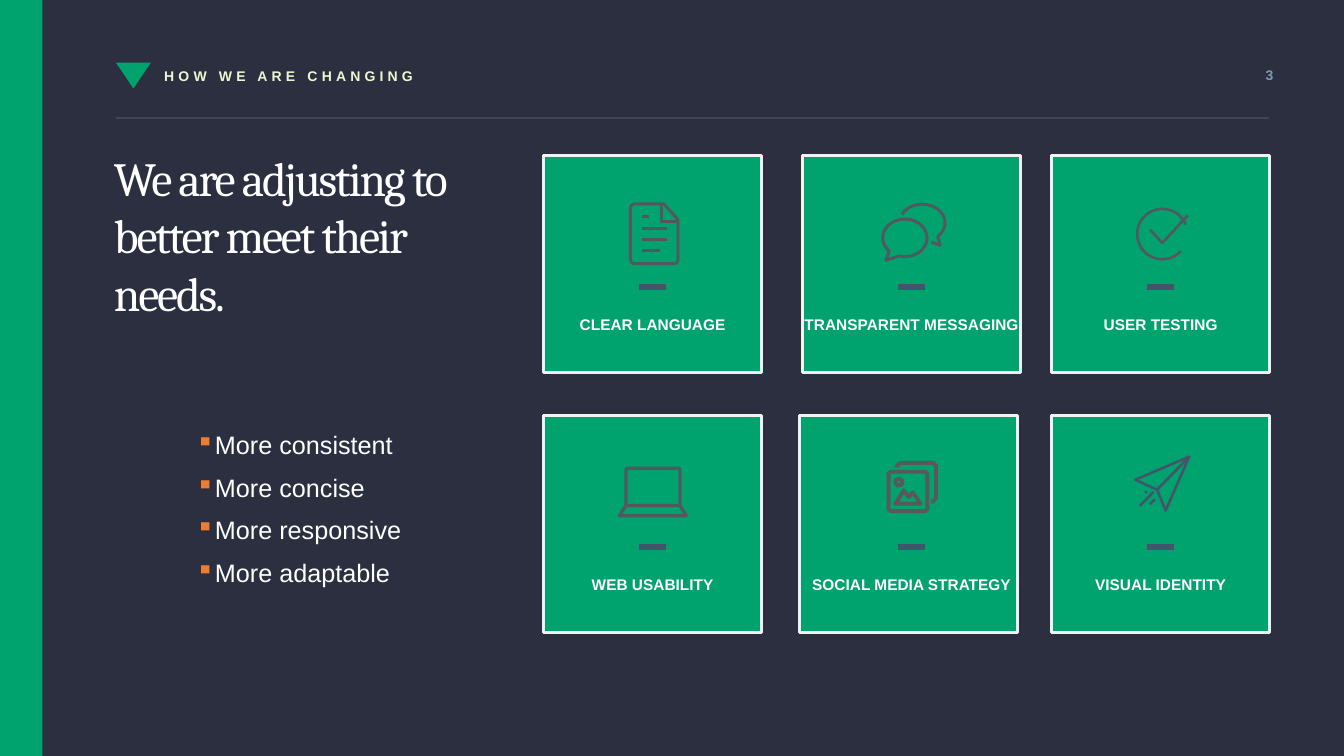
from dataclasses import dataclass
from math import cos, radians, sin

from lxml import etree
from pptx import Presentation
from pptx.dml.color import RGBColor
from pptx.enum.shapes import MSO_CONNECTOR, MSO_SHAPE
from pptx.enum.text import MSO_ANCHOR, MSO_AUTO_SIZE, PP_ALIGN
from pptx.oxml.ns import qn
from pptx.util import Pt

STRAIGHT = MSO_CONNECTOR.STRAIGHT
RECTANGLE, TRIANGLE = MSO_SHAPE.RECTANGLE, MSO_SHAPE.ISOSCELES_TRIANGLE
TOP, MIDDLE = MSO_ANCHOR.TOP, MSO_ANCHOR.MIDDLE
LEFT, CENTER, RIGHT = PP_ALIGN.LEFT, PP_ALIGN.CENTER, PP_ALIGN.RIGHT
TITLE_ONLY = 5


@dataclass(frozen=True)
class Theme:
    background: str = "2B2F40"
    green: str = "00A26E"
    rule: str = "434458"
    white: str = "FFFFFF"
    border: str = "F2F2F2"
    cream: str = "EEF7D0"
    number: str = "8497B0"
    slate: str = "44546A"
    gray: str = "53585F"
    dark_gray: str = "595959"
    bullet: str = "ED7D31"
    heading_font: str = "Cambria"
    body_font: str = "Arial"
    title_size: float = 34
    list_size: float = 18
    label_size: float = 11
    small_size: float = 10


THEME = Theme()

# Card grid
COLUMN_CENTERS = (466.2, 651.2, 829.1)
ROW_TOPS = (110.9, 296.6)
CARD_SIZE = 155.5
DASH_WIDTH = 19.4


def arc(center_x, center_y, radius_x, radius_y, start, end, steps=40):
    angles = [radians(start + (end - start) * i / steps) for i in range(steps + 1)]
    return [(center_x + radius_x * cos(a), center_y + radius_y * sin(a)) for a in angles]


def rounded(left, top, right, bottom, radius):
    corners = ((right - radius, bottom - radius, 0), (left + radius, bottom - radius, 90),
               (left + radius, top + radius, 180), (right - radius, top + radius, 270))
    points = [point for x, y, start in corners
              for point in arc(x, y, radius, radius, start, start + 90, 6)]
    return points + points[:1]


# Icon strokes, in points from the icon's top left corner
DOCUMENT = [
    [(25, 1), (4, 1), (1.8, 1.8), (1, 4), (1, 41), (1.8, 43), (4, 43.7), (32, 43.7),
     (34.2, 43), (35, 41), (35, 12.3), (25, 1)],
    [(23.5, 1), (23.5, 13.3), (35, 13.3)],
    [(9, 10.3), (14.5, 10.3)], [(9, 18.4), (27, 18.4)],
    [(9, 26.3), (27, 26.3)], [(9, 34.4), (22, 34.4)],
]
FRONT_BUBBLE = arc(17.1, 25.2, 15.8, 13.4, 105, -225)
CHAT = [
    FRONT_BUBBLE + [(3.5, 41.2), FRONT_BUBBLE[0]],
    arc(29.5, 14.4, 16.2, 13.2, 206, 407) + [(42.3, 30.6), (36, 28.2)],
]
CHECK = [
    arc(18.9, 18.9, 18, 18, -22, -317),
    [(10, 15.8), (18.9, 25.2), (37, 5.6)],
]
LAPTOP = [
    rounded(5.8, 1.1, 44.3, 27.7, 1),
    [(5.8, 27.7), (1, 35), (48.8, 35), (44.3, 27.7)],
]
PICTURES = [
    rounded(1.1, 7.2, 28.8, 35.3, 2.2),
    [(7.2, 4.3), (7.2, 3), (9.4, 0.8), (33, 0.8), (35, 3), (35, 26), (33, 28.3), (31.3, 28.3)],
    arc(8.5, 14.6, 2.4, 2.4, 0, 360),
    [(6, 30), (12, 20.6), (15.5, 25.2), (18.5, 22), (24, 30), (6, 30)],
]
PLANE = [
    [(1, 17.3), (39.5, 0.8), (22.7, 39.3), (16.5, 24.5), (1, 17.3)],
    [(16.5, 24.5), (39.5, 0.8)],
    [(4.2, 36), (14, 26)], [(11.4, 34.7), (15.2, 31.2)], [(8, 26.6), (9.2, 25.8)],
]

# Label, icon strokes, offset from card's top centre, colour, stroke width, card shift
CARD_ROWS = (
    (("CLEAR LANGUAGE", DOCUMENT, (-16.9, 33.8), THEME.gray, 2.1, 0),
     ("TRANSPARENT MESSAGING", CHAT, (-21.9, 33.8), THEME.gray, 2.1, 0),
     ("USER TESTING", CHECK, (-17.7, 37.4), THEME.gray, 1.8, 0)),
    (("WEB USABILITY", LAPTOP, (-24.8, 36.8), THEME.gray, 2.3, 0),
     ("SOCIAL MEDIA STRATEGY", PICTURES, (-17.6, 33.2), THEME.dark_gray, 2.8, -2.2),
     ("VISUAL IDENTITY", PLANE, (-19.1, 28.8), THEME.slate, 1.8, 0)),
)


def color(value):
    return RGBColor.from_string(value)


def write_text(shape, text, *, size, fill, font=THEME.body_font, bold=False, align=LEFT,
               anchor=TOP, wrap=True, tracking=0, bullet=None, line_spacing=None, gap=0):
    frame = shape.text_frame
    frame.word_wrap, frame.auto_size, frame.vertical_anchor = wrap, MSO_AUTO_SIZE.NONE, anchor
    for index, line in enumerate(text.split("\n")):
        paragraph = frame.add_paragraph() if index else frame.paragraphs[0]
        paragraph.alignment, paragraph.line_spacing = align, line_spacing
        if index and gap:
            paragraph.space_before = Pt(gap)
        if bullet:
            add_bullet(paragraph, bullet)
        run = paragraph.add_run()
        run.text = line
        run.font.name, run.font.size, run.font.bold = font, Pt(size), bold
        run.font.color.rgb = color(fill)
        if tracking:
            run.font._element.set("spc", str(round(tracking * 100)))


def add_bullet(paragraph, character):
    properties = paragraph._p.get_or_add_pPr()
    properties.set("marL", str(Pt(13.7)))
    properties.set("indent", str(-Pt(13.7)))
    bullet_color = etree.SubElement(properties, qn("a:buClr"))
    etree.SubElement(bullet_color, qn("a:srgbClr"), val=THEME.bullet)
    etree.SubElement(properties, qn("a:buChar"), char=character)


def add_text(slide, text, left, top, width, height, **text_format):
    box = slide.shapes.add_textbox(Pt(left), Pt(top), Pt(width), Pt(height))
    write_text(box, text, **text_format)
    return box


def add_block(slide, kind, left, top, width, height, border=None):
    shape = slide.shapes.add_shape(kind, Pt(left), Pt(top), Pt(width), Pt(height))
    shape.shadow.inherit = False
    shape.fill.solid()
    shape.fill.fore_color.rgb = color(THEME.green)
    if border:
        shape.line.color.rgb, shape.line.width = color(border), Pt(2.25)
    else:
        shape.line.fill.background()
    return shape


def add_rule(slide, left, right, y, fill, weight):
    rule = slide.shapes.add_connector(STRAIGHT, Pt(left), Pt(y), Pt(right), Pt(y))
    rule.line.color.rgb, rule.line.width = color(fill), Pt(weight)
    etree.SubElement(rule._element.spPr, qn("a:effectLst"))


def add_icon(slide, strokes, left, top, fill, weight):
    placed = [[(Pt(left + x), Pt(top + y)) for x, y in stroke] for stroke in strokes]
    builder = slide.shapes.build_freeform(*placed[0][0])
    for stroke in placed:
        builder.move_to(*stroke[0])
        builder.add_line_segments(stroke[1:], close=False)
    icon = builder.convert_to_shape()
    icon.shadow.inherit = False
    icon.fill.background()
    icon.line.color.rgb, icon.line.width = color(fill), Pt(weight)


def add_card(slide, center, top, label, strokes, offset, fill, weight, shift):
    add_block(slide, RECTANGLE, center - CARD_SIZE / 2 + shift, top, CARD_SIZE, CARD_SIZE,
              border=THEME.border)
    add_icon(slide, strokes, center + offset[0], top + offset[1], fill, weight)
    add_rule(slide, center - DASH_WIDTH / 2, center + DASH_WIDTH / 2, top + 94.3,
             THEME.slate, 4.5)
    add_text(slide, label, center - 85, top + 110.2, 170, 20.8, size=THEME.label_size,
             fill=THEME.white, bold=True, align=CENTER, anchor=MIDDLE, wrap=False)


def main():
    presentation = Presentation()
    presentation.slide_width, presentation.slide_height = Pt(960), Pt(540)
    slide = presentation.slides.add_slide(presentation.slide_layouts[TITLE_ONLY])
    slide.background.fill.solid()
    slide.background.fill.fore_color.rgb = color(THEME.background)

    # Side band and header
    add_block(slide, RECTANGLE, 0, 0, 30.3, 540)
    add_block(slide, TRIANGLE, 82.8, 44.7, 25, 18.5).rotation = 180
    add_text(slide, "HOW WE ARE CHANGING", 110.2, 44.6, 366.5, 19.4, size=THEME.small_size,
             fill=THEME.cream, bold=True, tracking=3)
    add_text(slide, "3", 787.7, 43.9, 128.9, 19.4, size=THEME.small_size,
             fill=THEME.number, bold=True, align=RIGHT, tracking=3)
    add_rule(slide, 82.8, 906.5, 84.2, THEME.rule, 1)

    # Title and list
    title = slide.shapes.title
    title.left, title.top, title.width, title.height = Pt(74.2), Pt(103), Pt(308.2), Pt(131)
    write_text(title, "We are adjusting to better meet their needs.", size=THEME.title_size,
               fill=THEME.white, font=THEME.heading_font, tracking=-1.5)
    add_text(slide, "More consistent\nMore concise\nMore responsive\nMore adaptable",
             132.8, 298.8, 177.8, 126.7, size=THEME.list_size, fill=THEME.white,
             bullet="▪", line_spacing=1.2, gap=4.6)

    # Cards
    for top, cards in zip(ROW_TOPS, CARD_ROWS):
        for center, card in zip(COLUMN_CENTERS, cards):
            add_card(slide, center, top, *card)

    presentation.save("out.pptx")


if __name__ == "__main__":
    main()
